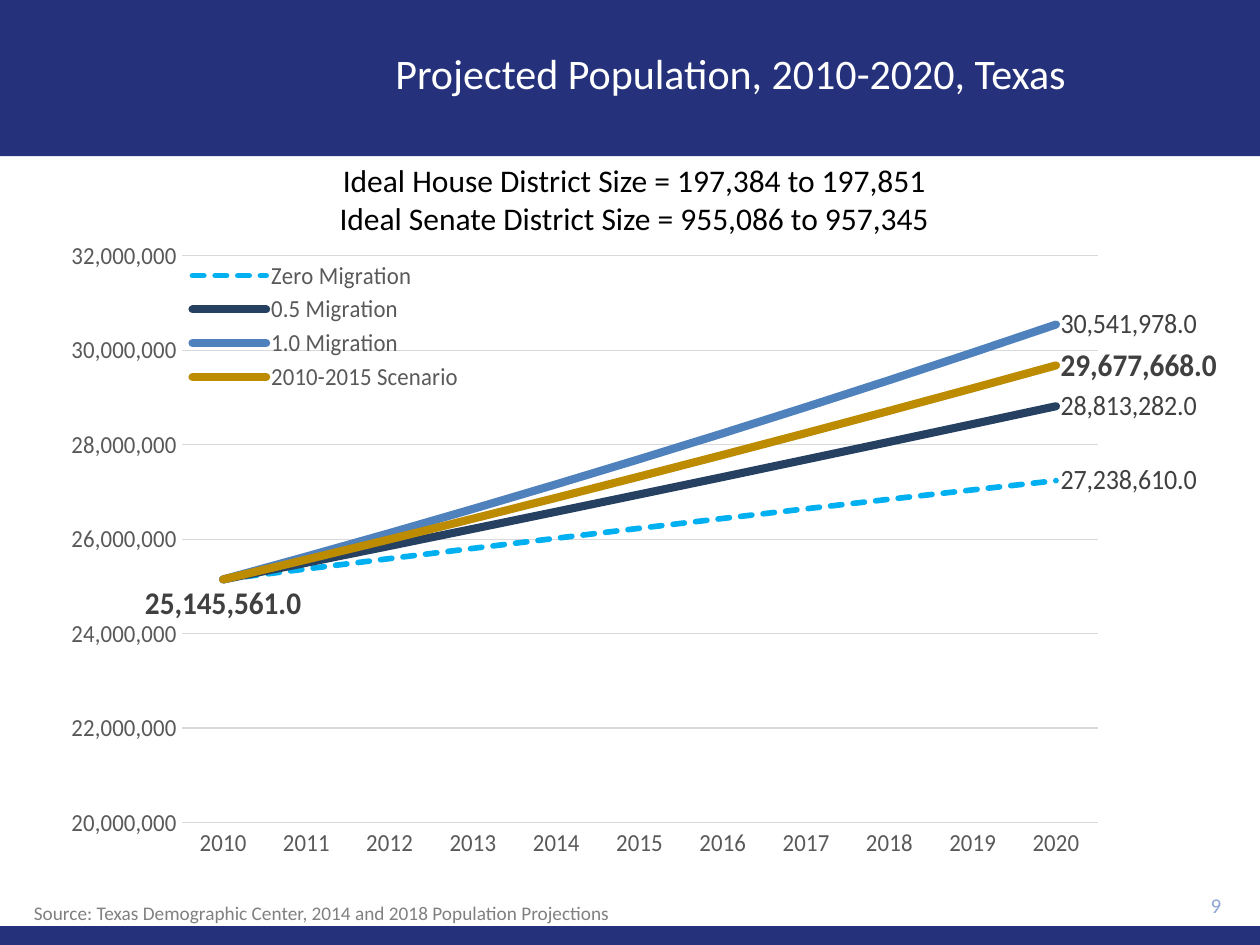
from dataclasses import dataclass

from lxml import etree
from pptx import Presentation
from pptx import util as u
from pptx.chart.data import CategoryChartData
from pptx.dml.color import RGBColor
from pptx.enum import chart as ch, dml, shapes, text
from pptx.oxml.ns import qn


@dataclass(frozen=True)
class Theme:
    font: str = "Calibri"
    navy: str = "25327B"
    white: str = "FFFFFF"
    black: str = "000000"
    page: str = "8FA5D1"
    source: str = "808080"
    axis: str = "595959"
    grid: str = "D9D9D9"
    label: str = "404040"
    title_size: int = 24
    subtitle_size: int = 18
    bold_label_size: int = 18
    label_size: int = 16
    axis_size: int = 14
    page_size: int = 12
    source_size: int = 11


@dataclass(frozen=True)
class Box:
    left: float
    top: float
    width: float
    height: float

    def emu(self) -> tuple:
        return tuple(u.Inches(v) for v in (self.left, self.top, self.width, self.height))


@dataclass(frozen=True)
class Label:
    wording: str
    box: Box
    size: int
    color: str
    align: text.PP_ALIGN
    anchor: text.MSO_ANCHOR = text.MSO_ANCHOR.TOP
    spacing: float = 1.0
    wrap: bool = True


@dataclass(frozen=True)
class Scenario:
    name: str
    color: str
    width: float
    values: tuple
    dashed: bool = False
    bold: bool = False


T = Theme()
ALIGN, ANCHOR = text.PP_ALIGN, text.MSO_ANCHOR
BANDS = (Box(0, 0, 10, 1.24), Box(0, 7.35, 10, 0.15))
LABELS = (
    Label("Projected Population, 2010-2020, Texas", Box(1.7, 0.1, 8.2, 1),
          T.title_size, T.white, ALIGN.CENTER, ANCHOR.MIDDLE, spacing=0.9),
    Label("9", Box(8.9, 7.01, 0.89, 0.34), T.page_size, T.page, ALIGN.RIGHT, ANCHOR.MIDDLE),
    Label("Source: Texas Demographic Center, 2014 and 2018 Population Projections",
          Box(0.17, 7.1, 4.81, 0.29), T.source_size, T.source, ALIGN.LEFT, wrap=False),
    Label("Ideal House District Size = 197,384 to 197,851\n"
          "Ideal Senate District Size = 955,086 to 957,345",
          Box(2.09, 1.23, 5.89, 0.71), T.subtitle_size, T.black, ALIGN.CENTER),
)
CHART = Box(0.41, 1.81, 9.25, 5.1)
PLOT = Box(1.52, 2.03, 7.83, 4.5)
LEGEND = Box(1.45, 2.04, 2.6, 1.1)
YEARS = range(2010, 2021)
SCENARIOS = (
    Scenario("Zero Migration", "00B0F0", 3.5, (
        25145561, 25368140, 25587758, 25804803, 26018996, 26230098,
        26438031, 26642846, 26844587, 27043215, 27238610), dashed=True),
    Scenario("0.5 Migration", "254061", 5, (
        25145561, 25499699, 25857200, 26217850, 26581256, 26947116,
        27315362, 27686234, 28059417, 28435222, 28813282)),
    Scenario("1.0 Migration", "4F81BD", 5, (
        25145561, 25631695, 26130047, 26640165, 27161942, 27695284,
        28240245, 28797290, 29366479, 29948091, 30541978)),
    Scenario("2010-2015 Scenario", "BC8B00", 5, (
        25145561, 25567291, 25996722, 26433242, 26876429, 27326193,
        27782691, 28245982, 28716123, 29193268, 29677668), bold=True),
)


def style_font(font, size: float, color: str, bold: bool = False) -> None:
    font.name, font.size, font.bold = T.font, u.Pt(size), bold
    font.color.rgb = RGBColor.from_string(color)


def style_line(line, color: str, width: float) -> None:
    line.color.rgb = RGBColor.from_string(color)
    line.width = u.Pt(width)


def add_band(slide, box: Box) -> None:
    sp = slide.shapes.add_shape(shapes.MSO_SHAPE.RECTANGLE, *box.emu())
    sp.shadow.inherit = False
    sp.fill.solid()
    sp.fill.fore_color.rgb = RGBColor.from_string(T.navy)
    sp.line.fill.background()


def add_label(slide, label: Label) -> None:
    tf = slide.shapes.add_textbox(*label.box.emu()).text_frame
    tf.word_wrap = label.wrap
    tf.vertical_anchor = label.anchor
    tf.text = label.wording
    for p in tf.paragraphs:
        p.alignment = label.align
        p.line_spacing = label.spacing
        for r in p.runs:
            style_font(r.font, label.size, label.color)


def make_layout(box: Box, inner: bool):
    """Build a manual layout from a box given in slide inches."""
    layout = etree.Element(qn("c:layout"))
    manual = etree.SubElement(layout, qn("c:manualLayout"))
    settings = [("layoutTarget", "inner")] if inner else []
    settings += [
        ("xMode", "edge"), ("yMode", "edge"),
        ("x", round((box.left - CHART.left) / CHART.width, 4)),
        ("y", round((box.top - CHART.top) / CHART.height, 4)),
        ("w", round(box.width / CHART.width, 4)),
        ("h", round(box.height / CHART.height, 4)),
    ]
    for tag, value in settings:
        etree.SubElement(manual, qn(f"c:{tag}")).set("val", str(value))
    return layout


def label_point(series, index: int, position, bold: bool) -> None:
    label = series.points[index].data_label
    style_font(label.font, T.bold_label_size if bold else T.label_size, T.label, bold)
    label.position = position
    dlbl = series.data_labels._element.findall(qn("c:dLbl"))[-1]
    fmt = etree.Element(qn("c:numFmt"), formatCode="#,##0.0", sourceLinked="0")
    dlbl.find(qn("c:idx")).addnext(fmt)


def style_series(series, scenario: Scenario) -> None:
    series.smooth = False
    series.marker.style = ch.XL_MARKER_STYLE.NONE
    line = series.format.line
    style_line(line, scenario.color, scenario.width)
    if scenario.dashed:
        line.dash_style = dml.MSO_LINE.SQUARE_DOT
    series._element.find(".//" + qn("a:ln")).set("cap", "rnd")
    series.data_labels.show_value = False
    if scenario.bold:
        label_point(series, 0, ch.XL_LABEL_POSITION.BELOW, True)
    label_point(series, len(YEARS) - 1, ch.XL_LABEL_POSITION.RIGHT, scenario.bold)


def style_axes(chart) -> None:
    for axis in (chart.category_axis, chart.value_axis):
        axis.major_tick_mark = axis.minor_tick_mark = ch.XL_TICK_MARK.NONE
        style_font(axis.tick_labels.font, T.axis_size, T.axis)
    style_line(chart.category_axis.format.line, T.grid, 0.75)
    axis = chart.value_axis
    axis.minimum_scale, axis.maximum_scale, axis.major_unit = 20e6, 32e6, 2e6
    axis.format.line.fill.background()
    style_line(axis.major_gridlines.format.line, T.grid, 0.75)
    axis.tick_labels.number_format = "#,##0"
    axis.tick_labels.number_format_is_linked = False


def add_population_chart(slide) -> None:
    data = CategoryChartData(number_format="#,##0")
    data.categories = [str(year) for year in YEARS]
    for scenario in SCENARIOS:
        data.add_series(scenario.name, scenario.values)
    chart = slide.shapes.add_chart(ch.XL_CHART_TYPE.LINE, *CHART.emu(), data).chart
    style_font(chart.font, T.axis_size, T.black)
    chart.has_title = False
    chart.plots[0].vary_by_categories = False
    style_axes(chart)
    for series, scenario in zip(chart.plots[0].series, SCENARIOS):
        style_series(series, scenario)

    chart.has_legend = True
    legend = chart.legend
    legend.position = ch.XL_LEGEND_POSITION.CORNER
    legend.include_in_layout = True
    style_font(legend.font, T.axis_size, T.axis)
    el = legend._element
    for old in el.findall(qn("c:layout")):
        el.remove(old)
    el.find(qn("c:legendPos")).addnext(make_layout(LEGEND, inner=False))

    plot_area = chart._chartSpace.find(".//" + qn("c:plotArea"))
    for old in plot_area.findall(qn("c:layout")):
        plot_area.remove(old)
    plot_area.insert(0, make_layout(PLOT, inner=True))


def main() -> None:
    prs = Presentation()
    prs.slide_width, prs.slide_height = u.Inches(10), u.Inches(7.5)
    slide = prs.slides.add_slide(prs.slide_layouts[6])
    for band in BANDS:
        add_band(slide, band)
    add_population_chart(slide)
    for label in LABELS:
        add_label(slide, label)
    prs.save("out.pptx")


if __name__ == "__main__":
    main()
